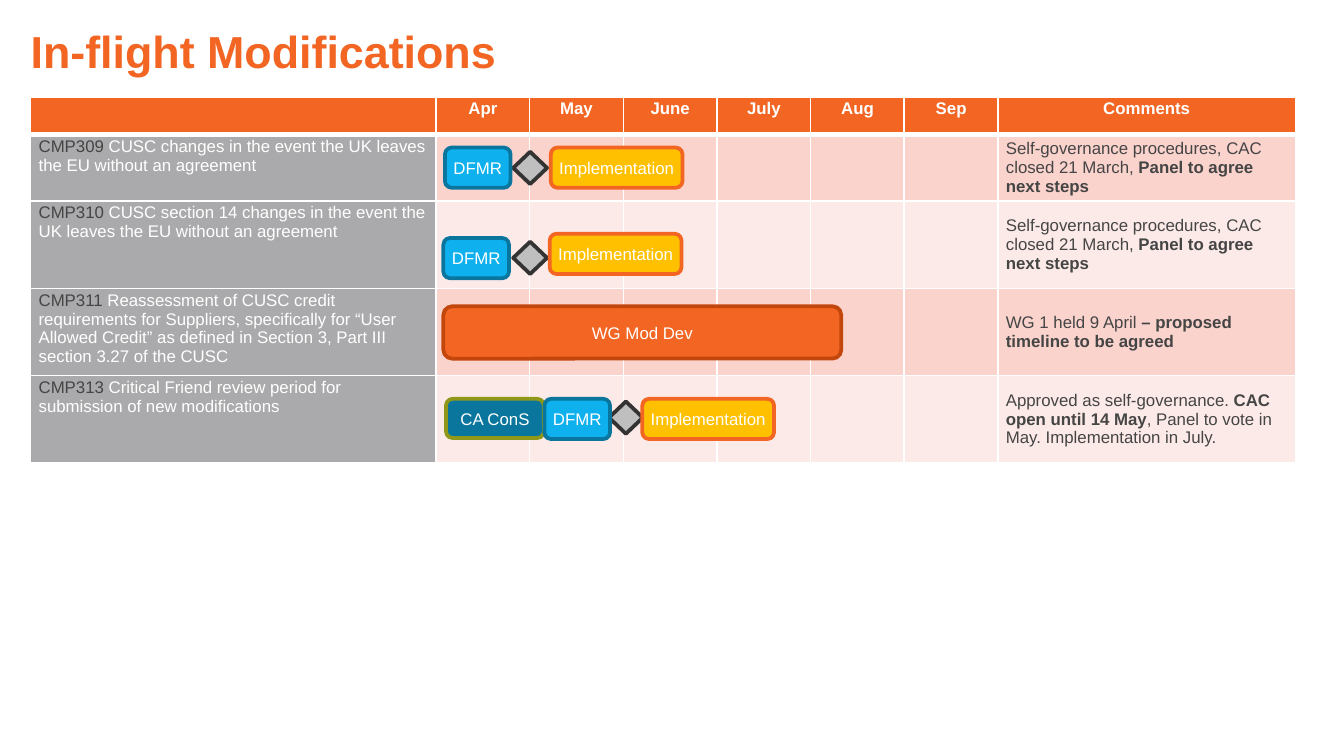
from dataclasses import dataclass

from lxml.etree import SubElement
from pptx import Presentation
from pptx.dml.color import RGBColor
from pptx.enum.shapes import MSO_SHAPE as Shape
from pptx.enum.text import MSO_ANCHOR as Anchor, PP_ALIGN as Align
from pptx.oxml.ns import qn
from pptx.util import Cm, Pt


@dataclass(frozen=True)
class Theme:
    font: str = "Arial"
    title_size: int = 24
    body_size: int = 9
    line_width: int = 2
    white: str = "FFFFFF"
    text: str = "454545"
    orange: str = "F26522"
    dark_orange: str = "C3470C"
    grey: str = "AAAAAC"
    bands: tuple = ("FAD3CD", "FCEAE8")
    blue: str = "0EB1EE"
    teal: str = "0A769E"
    olive: str = "90981A"
    yellow: str = "FFC000"
    silver: str = "BFBFBF"
    charcoal: str = "333333"


THEME = Theme()

HEADERS = ["", "Apr", "May", "June", "July", "Aug", "Sep", "Comments"]
COLUMN_WIDTHS = [7.66] + [1.77] * 6 + [5.62]
ROW_HEIGHTS = [0.72, 1.25, 1.65, 1.65, 1.65]

# Code, description, comment as (text, bold) parts
SELF_GOVERNANCE = [("Self-governance procedures, CAC closed 21 March, ", False),
                   ("Panel to agree next steps", True)]
MODIFICATIONS = [
    ("CMP309 ", "CUSC changes in the event the UK leaves the EU without an agreement",
     SELF_GOVERNANCE),
    ("CMP310 ", "CUSC section 14 changes in the event the UK leaves the EU without "
     "an agreement", SELF_GOVERNANCE),
    ("CMP311 ", "Reassessment of CUSC credit requirements for Suppliers, specifically "
     "for “User Allowed Credit” as defined in Section 3, Part III section 3.27 of the CUSC",
     [("WG 1 held 9 April ", False), ("– proposed timeline to be agreed", True)]),
    ("CMP313 ", "Critical Friend review period for submission of new modifications",
     [("Approved as self-governance. ", False), ("CAC open until 14 May", True),
      (", Panel to vote in May. Implementation in July.", False)]),
]

# Stage label: fill, line, width, height
STAGES = {
    "DFMR": (THEME.blue, THEME.teal, 1.24, 0.76),
    "Implementation": (THEME.yellow, THEME.orange, 2.49, 0.76),
    "WG Mod Dev": (THEME.orange, THEME.dark_orange, 7.52, 0.99),
    "CA ConS": (THEME.teal, THEME.olive, 1.85, 0.74),
}
# Label, left, top
TIMELINE = [
    ("DFMR", 8.41, 2.79), ("Implementation", 10.41, 2.79),
    ("DFMR", 8.38, 4.5), ("Implementation", 10.39, 4.42),
    ("WG Mod Dev", 8.38, 5.79),
    ("CA ConS", 8.43, 7.54), ("DFMR", 10.29, 7.54), ("Implementation", 12.14, 7.54),
]
DECISIONS = [(9.7, 2.87), (9.7, 4.57), (11.51, 7.59)]


def add_text(para, text, *, size=THEME.body_size, color=THEME.white, bold=False):
    span = para.add_run()
    span.text = text
    span.font.name = THEME.font
    span.font.size = Pt(size)
    span.font.bold = bold
    span.font.color.rgb = RGBColor.from_string(color)


def clear_margins(frame):
    frame.margin_left = frame.margin_right = 0
    frame.margin_top = frame.margin_bottom = 0
    frame.word_wrap = True


def add_title(page, text):
    box = page.shapes.add_textbox(Cm(0.58), Cm(0.64), Cm(16.87), Cm(0.97))
    clear_margins(box.text_frame)
    para = box.text_frame.paragraphs[0]
    para.line_spacing = 0.8
    add_text(para, text, size=THEME.title_size, color=THEME.orange, bold=True)


def set_borders(cell, **widths):
    properties = cell._tc.get_or_add_tcPr()
    for side in "LRTB":
        line = SubElement(properties, qn(f"a:ln{side}"), w=str(Pt(widths.get(side, 1))))
        fill = SubElement(line, qn("a:solidFill"))
        SubElement(fill, qn("a:srgbClr"), val=THEME.white)


def format_cell(cell, fill, **borders):
    set_borders(cell, **borders)
    cell.fill.solid()
    cell.fill.fore_color.rgb = RGBColor.from_string(fill)
    cell.margin_left = cell.margin_right = Cm(0.15)
    cell.margin_top = cell.margin_bottom = Cm(0.05)
    # Keeps empty cells from stretching their row
    ending = cell.text_frame.paragraphs[0]._p.get_or_add_endParaRPr()
    ending.set("sz", str(THEME.body_size * 100))


def add_plan_table(page):
    table = page.shapes.add_table(
        len(ROW_HEIGHTS), len(COLUMN_WIDTHS), Cm(0.58), Cm(1.83),
        Cm(sum(COLUMN_WIDTHS)), Cm(sum(ROW_HEIGHTS))).table
    for column, width in zip(table.columns, COLUMN_WIDTHS):
        column.width = Cm(width)
    for row, height in zip(table.rows, ROW_HEIGHTS):
        row.height = Cm(height)

    # Header row
    for cell, label in zip(table.rows[0].cells, HEADERS):
        format_cell(cell, THEME.orange, B=3)
        if label:
            para = cell.text_frame.paragraphs[0]
            para.alignment = Align.CENTER
            add_text(para, label, bold=True)

    # One row per modification
    for index, (code, description, comment) in enumerate(MODIFICATIONS):
        cells = list(table.rows[index + 1].cells)
        for number, cell in enumerate(cells):
            fill = THEME.bands[index % 2] if number else THEME.grey
            format_cell(cell, fill, T=1 if index else 3)
        para = cells[0].text_frame.paragraphs[0]
        add_text(para, code, color=THEME.text)
        add_text(para, description)
        cells[-1].vertical_anchor = Anchor.MIDDLE
        para = cells[-1].text_frame.paragraphs[0]
        for text, bold in comment:
            add_text(para, text, color=THEME.text, bold=bold)


def add_block(page, kind, left, top, width, height, fill, line):
    block = page.shapes.add_shape(kind, Cm(left), Cm(top), Cm(width), Cm(height))
    block.shadow.inherit = False
    block.fill.solid()
    block.fill.fore_color.rgb = RGBColor.from_string(fill)
    block.line.color.rgb = RGBColor.from_string(line)
    block.line.width = Pt(THEME.line_width)
    return block


def add_stage(page, label, left, top):
    fill, line, width, height = STAGES[label]
    stage = add_block(page, Shape.ROUNDED_RECTANGLE, left, top, width, height, fill, line)
    frame = stage.text_frame
    clear_margins(frame)
    frame.vertical_anchor = Anchor.MIDDLE
    para = frame.paragraphs[0]
    para.alignment = Align.CENTER
    add_text(para, label)


def main():
    deck = Presentation()
    deck.slide_width, deck.slide_height = Cm(25.4), Cm(14.29)
    page = deck.slides.add_slide(deck.slide_layouts[6])

    add_plan_table(page)
    add_title(page, "In-flight Modifications")

    # Timeline over the month columns
    for left, top in DECISIONS:
        add_block(page, Shape.DIAMOND, left, top, 0.64, 0.61, THEME.silver, THEME.charcoal)
    for label, left, top in TIMELINE:
        add_stage(page, label, left, top)

    deck.save("out.pptx")


if __name__ == "__main__":
    main()
